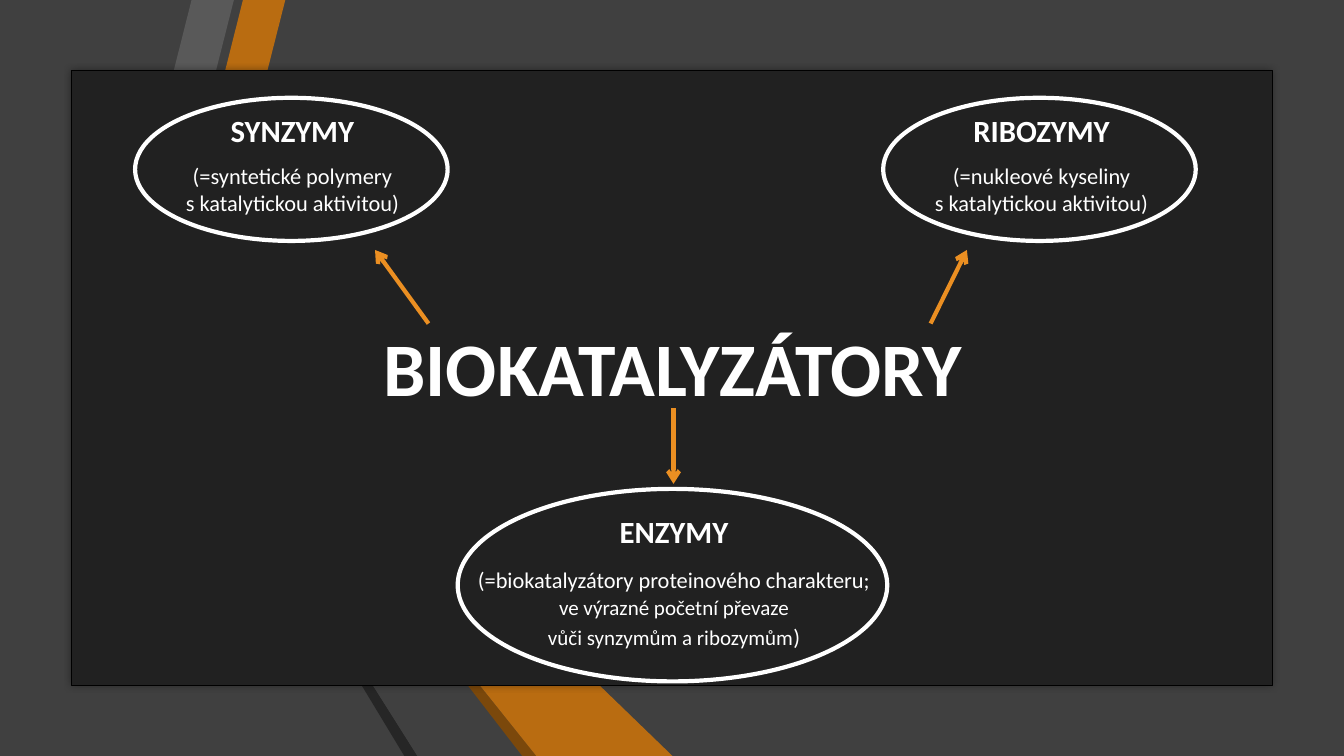
import pptx
import pptx.dml.color
import pptx.enum.shapes
import pptx.enum.text
import pptx.oxml
import pptx.oxml.ns
import pptx.util
import lxml.etree

Inches, Pt = pptx.util.Inches, pptx.util.Pt
qn = pptx.oxml.ns.qn
SHAPE = pptx.enum.shapes.MSO_SHAPE
FONT = "Calibri"

COLORS = {
    "backdrop": "404040", "panel": "212121", "text": "FFFFFF", "edge": "000000",
    "arrow": "EB8F22", "orange": "B96C11", "brown": "7B480B",
    "grey": "595959", "dark": "262626",
}

# Folded ribbons behind the panel: colour and outline points
RIBBONS = [
    ("orange", [(1.67, 2.94), (2.06, 3.04), (2.83, 0), (2.41, 0)]),
    ("grey", [(1.58, 2.92), (2.32, 0), (1.9, 0), (1.19, 2.82)]),
    ("dark", [(1.19, 2.83), (4.01, 7.5), (4.14, 7.5)]),
    ("brown", [(5.32, 7.5), (1.67, 2.95), (5.18, 7.5)]),
    ("orange", [(1.67, 2.94), (5.32, 7.5), (6.67, 7.5), (2.06, 3.04)]),
    ("backdrop", [(5.11, 7.5), (1.58, 2.92), (1.19, 2.82), (4.14, 7.5)]),
]
PANEL = (0.71, 0.7, 11.91, 6.1)

TITLE = ("BIOKATALYZÁTORY", 54, (3.02, 2.6, 7.31, 2.07))
GROUPS = [
    {"name": "SYNZYMY",
     "about": [("(=syntetické polymery\ns katalytickou aktivitou)", 16)],
     "text_box": (1.66, 1.08, 2.48, 1.09), "oval": (1.34, 0.97, 3.1, 1.42),
     "arrow": (4.25, 3.21, 3.72, 2.48), "spacing": 1.0},
    {"name": "RIBOZYMY",
     "about": [("(=nukleové kyseliny\ns katalytickou aktivitou)", 16)],
     "text_box": (9.09, 1.08, 2.48, 1.09), "oval": (8.76, 0.97, 3.1, 1.42),
     "arrow": (9.23, 3.21, 9.59, 2.48), "spacing": 1.0},
    {"name": "ENZYMY",
     "about": [("(=biokatalyzátory proteinového charakteru; ", 16),
               ("ve výrazné početní převaze\nvůči synzymům a ribozymům", 15),
               (")", 16)],
     "text_box": (4.56, 4.93, 4.25, 1.64), "oval": (4.54, 4.85, 4.26, 1.91),
     "arrow": (6.68, 4.05, 6.68, 4.8), "spacing": 1.1},
]


def rgb(name):
    return pptx.dml.color.RGBColor.from_string(COLORS[name])


def paint(shape, fill=None, line=None, width=0):
    shape.shadow.inherit = False
    if fill:
        shape.fill.solid()
        shape.fill.fore_color.rgb = rgb(fill)
    else:
        shape.fill.background()
    if line:
        shape.line.color.rgb = rgb(line)
        shape.line.width = Pt(width)
    else:
        shape.line.fill.background()


def add_shape(slide, kind, box, **look):
    shape = slide.shapes.add_shape(kind, *map(Inches, box))
    paint(shape, **look)
    return shape


def add_ribbon(slide, color, points):
    corners = [(Inches(x), Inches(y)) for x, y in points]
    builder = slide.shapes.build_freeform(*corners[0], scale=1.0)
    builder.add_line_segments(corners[1:], close=True)
    paint(builder.convert_to_shape(), fill=color)


def add_glow_shadow(shape):
    """Give the shape a soft black shadow on all sides."""
    effects = shape._element.spPr.find(qn("a:effectLst"))
    shadow = lxml.etree.SubElement(effects, qn("a:outerShdw"), blurRad=str(Pt(5)))
    color = lxml.etree.SubElement(shadow, qn("a:srgbClr"), val=COLORS["edge"])
    lxml.etree.SubElement(color, qn("a:alpha"), val="40000")


def add_text(slide, box, paragraphs, spacing=1.0):
    """Each paragraph is (pieces, bold); each piece is (text, size)."""
    frame = slide.shapes.add_textbox(*map(Inches, box)).text_frame
    frame.word_wrap = True
    frame.vertical_anchor = pptx.enum.text.MSO_ANCHOR.MIDDLE
    for number, (pieces, bold) in enumerate(paragraphs):
        paragraph = frame.add_paragraph() if number else frame.paragraphs[0]
        paragraph.alignment = pptx.enum.text.PP_ALIGN.CENTER
        paragraph.line_spacing = spacing
        paragraph.space_before = Pt(0.2 * pieces[0][1])
        paragraph.space_after = Pt(6)
        for text, size in pieces:
            for row, words in enumerate(text.split("\n")):
                if row:
                    paragraph.add_line_break()
                    line_break = paragraph._p.findall(qn("a:br"))[-1]
                    lxml.etree.SubElement(line_break, qn("a:rPr"), sz=str(size * 100))
                run = paragraph.add_run()
                run.text = words
                run.font.name = FONT
                run.font.size = Pt(size)
                run.font.bold = bold
                run.font.color.rgb = rgb("text")


def add_arrow(slide, ends):
    arrow = slide.shapes.add_connector(
        pptx.enum.shapes.MSO_CONNECTOR.STRAIGHT, *map(Inches, ends))
    arrow.line.color.rgb = rgb("arrow")
    arrow.line.width = Pt(3)
    lxml.etree.SubElement(arrow.line._get_or_add_ln(), qn("a:tailEnd"), type="arrow")
    lxml.etree.SubElement(arrow._element.spPr, qn("a:effectLst"))


def main():
    deck = pptx.Presentation()
    deck.slide_width, deck.slide_height = Inches(13.33), Inches(7.5)
    slide = deck.slides.add_slide(deck.slide_layouts[6])
    slide.background.fill.solid()
    slide.background.fill.fore_color.rgb = rgb("backdrop")

    for color, points in RIBBONS:
        add_ribbon(slide, color, points)
    panel = add_shape(slide, SHAPE.RECTANGLE, PANEL, fill="panel", line="edge", width=0.25)
    add_glow_shadow(panel)

    title, title_size, title_box = TITLE
    add_text(slide, title_box, [([(title, title_size)], True)])
    for group in GROUPS:
        paragraphs = [([(group["name"], 22)], True), (group["about"], False)]
        add_text(slide, group["text_box"], paragraphs, group["spacing"])
        add_shape(slide, SHAPE.OVAL, group["oval"], line="text", width=3)
        add_arrow(slide, group["arrow"])

    deck.save("out.pptx")


if __name__ == "__main__":
    main()
